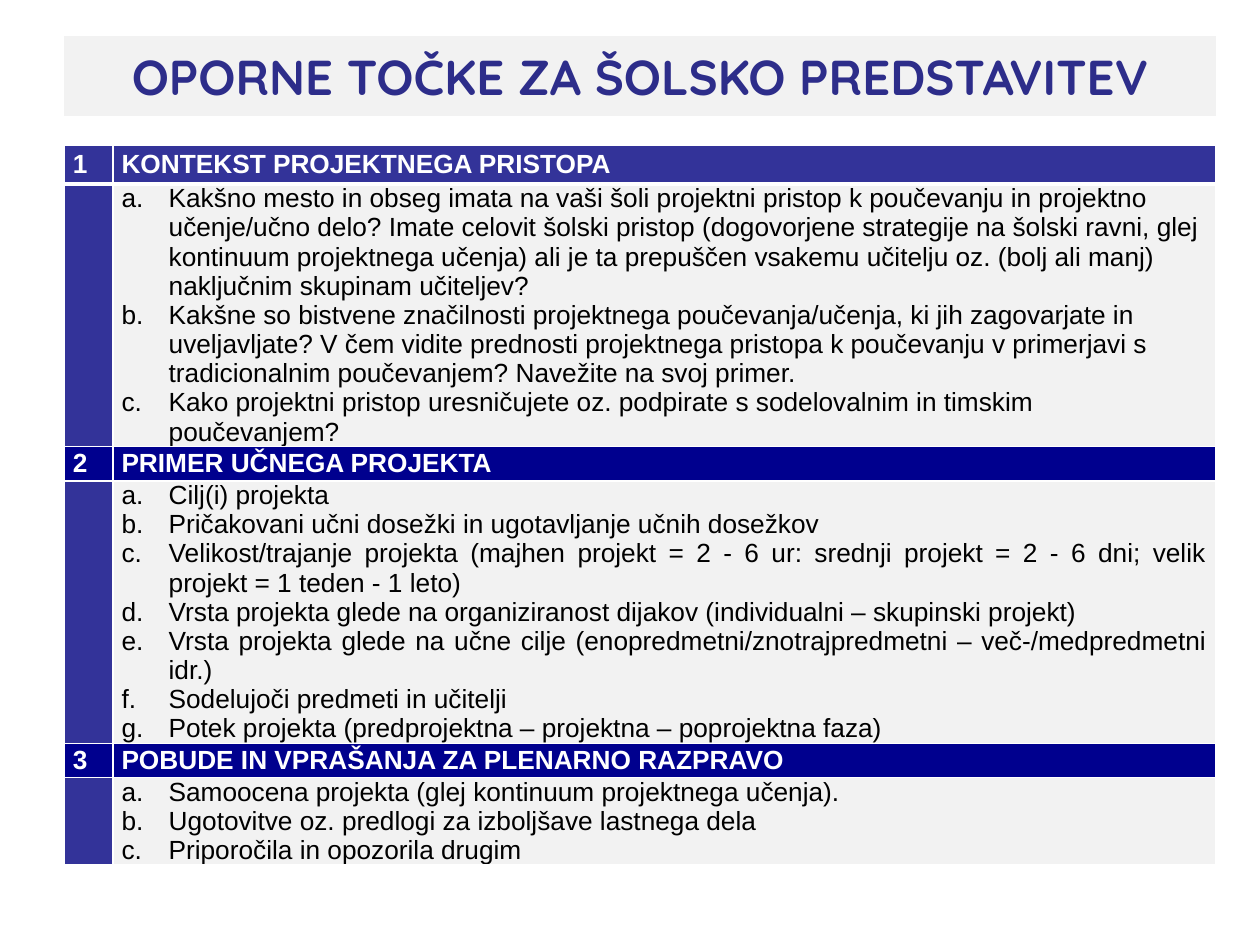
from dataclasses import dataclass
from lxml import etree
from pptx import Presentation
from pptx.dml.color import RGBColor
from pptx.enum.text import MSO_ANCHOR, PP_ALIGN
from pptx.oxml.ns import qn
from pptx.util import Cm, Pt

MIDDLE = MSO_ANCHOR.MIDDLE
LEFT, CENTER, JUSTIFY = PP_ALIGN.LEFT, PP_ALIGN.CENTER, PP_ALIGN.JUSTIFY


@dataclass
class Theme:
    ink = RGBColor(0x00, 0x00, 0x00)
    white = RGBColor(0xFF, 0xFF, 0xFF)
    pale = RGBColor(0xF2, 0xF2, 0xF2)
    title = RGBColor(0x2D, 0x2D, 0x8A)
    blue = RGBColor(0x33, 0x33, 0x99)
    navy = RGBColor(0x00, 0x00, 0x8E)
    head = Pt(28)
    body = Pt(15)


def paint(cell, color):
    cell.fill.solid()
    cell.fill.fore_color.rgb = color


def write(cell, lines, align, color, bold, listed):
    cell.vertical_anchor = MIDDLE
    cell.margin_left = cell.margin_right = Cm(0.17)
    cell.margin_top = cell.margin_bottom = 0
    frame = cell.text_frame
    frame.text = "\n".join(lines)
    indent = Cm(0.95 if listed else 0.64)
    for para in frame.paragraphs:
        para.alignment = align
        props = para._p.get_or_add_pPr()
        props.set("marL", str(indent))
        props.set("indent", str(-indent))
        if listed:
            etree.SubElement(props, qn("a:buFont"), typeface="+mj-lt")
            etree.SubElement(props, qn("a:buAutoNum"), type="alphaLcPeriod")
        tabs = etree.SubElement(props, qn("a:tabLst"))
        for stop in (0.64, 1.25):
            etree.SubElement(tabs, qn("a:tab"), pos=str(Cm(stop)), algn="l")
        font = para.font
        font.name, font.size, font.bold = "Arial", Theme.body, bold
        font.color.rgb = color


parts = [
    ("KONTEKST PROJEKTNEGA PRISTOPA", Theme.blue, LEFT, 0.79, 4.01, [
        "Kakšno mesto in obseg imata na vaši šoli projektni pristop k poučevanju in projektno "
        "učenje/učno delo? Imate celovit šolski pristop (dogovorjene strategije na šolski ravni, "
        "glej kontinuum projektnega učenja) ali je ta prepuščen vsakemu učitelju oz. "
        "(bolj ali manj) naključnim skupinam učiteljev?",
        "Kakšne so bistvene značilnosti projektnega poučevanja/učenja, ki jih zagovarjate in "
        "uveljavljate? V čem vidite prednosti projektnega pristopa k poučevanju v primerjavi s "
        "tradicionalnim poučevanjem? Navežite na svoj primer.",
        "Kako projektni pristop uresničujete oz. podpirate s sodelovalnim in timskim poučevanjem?",
    ]),
    ("PRIMER UČNEGA PROJEKTA", Theme.navy, JUSTIFY, 0.69, 4.01, [
        "Cilj(i) projekta",
        "Pričakovani učni dosežki in ugotavljanje učnih dosežkov",
        "Velikost/trajanje projekta (majhen projekt = 2 - 6 ur: srednji projekt = 2 - 6 dni; "
        "velik projekt = 1 teden - 1 leto)",
        "Vrsta projekta glede na organiziranost dijakov (individualni – skupinski projekt)",
        "Vrsta projekta glede na učne cilje (enopredmetni/znotrajpredmetni – več-/medpredmetni "
        "idr.)",
        "Sodelujoči predmeti in učitelji",
        "Potek projekta (predprojektna – projektna – poprojektna faza)",
    ]),
    ("POBUDE IN VPRAŠANJA ZA PLENARNO RAZPRAVO", Theme.navy, JUSTIFY, 0.69, 1.73, [
        "Samoocena projekta (glej kontinuum projektnega učenja).",
        "Ugotovitve oz. predlogi za izboljšave lastnega dela",
        "Priporočila in opozorila drugim",
    ]),
]

deck = Presentation()
deck.slide_width, deck.slide_height = Cm(25.4), Cm(19.05)
slide = deck.slides.add_slide(deck.slide_layouts[5])

title = slide.shapes.title
title.left, title.top, title.width, title.height = Cm(1.3), Cm(0.73), Cm(23.2), Cm(1.6)
title.fill.solid()
title.fill.fore_color.rgb = Theme.pale
title.line.color.rgb = Theme.pale
title.line.width = Pt(0.75)
title.text_frame.text = "OPORNE TOČKE ZA ŠOLSKO PREDSTAVITEV"
title.text_frame.vertical_anchor = MIDDLE
para = title.text_frame.paragraphs[0]
para.alignment = CENTER
para.font.name, para.font.size, para.font.bold = "Quicksand", Theme.head, True
para.font.color.rgb = Theme.title

frame = slide.shapes.add_table(2 * len(parts), 2, Cm(1.3), Cm(2.92), Cm(23.2), Cm(15.5))
table = frame.table
table.horz_banding = False
table.columns[0].width, table.columns[1].width = Cm(0.98), Cm(22.22)

for i, (name, color, align, high, deep, points) in enumerate(parts):
    top, low = 2 * i, 2 * i + 1
    table.rows[top].height, table.rows[low].height = Cm(high), Cm(deep)
    for col, text in enumerate((str(i + 1), name)):
        cell = table.cell(top, col)
        paint(cell, color)
        write(cell, [text], JUSTIFY, Theme.white, True, False)
    paint(table.cell(low, 0), Theme.blue)
    paint(table.cell(low, 1), Theme.pale)
    write(table.cell(low, 1), points, align, Theme.ink, False, True)

for cell in table.rows[0].cells:
    edge = etree.Element(qn("a:lnB"), w=str(Pt(3)))
    fill = etree.SubElement(edge, qn("a:solidFill"))
    etree.SubElement(fill, qn("a:srgbClr"), val=str(Theme.white))
    cell._tc.get_or_add_tcPr().insert(0, edge)

frame.height = Cm(15.5)
deck.save("out.pptx")
